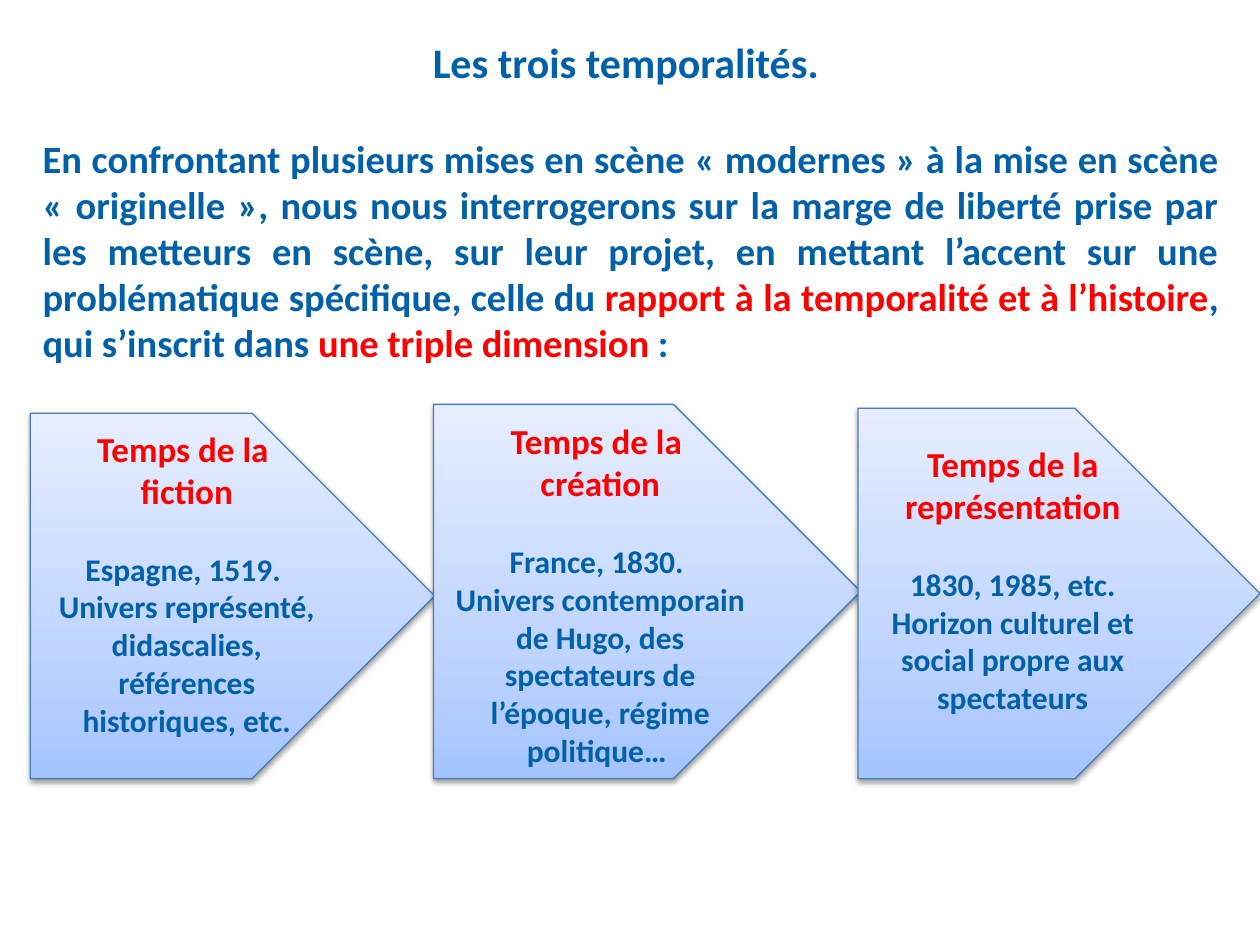
from copy import deepcopy

from lxml import etree
from pptx import Presentation
from pptx import util as u
from pptx.dml.color import RGBColor
from pptx.enum import shapes, text
from pptx.oxml import ns

BLUE = RGBColor(0x00, 0x60, 0xA8)
RED = RGBColor(0xFF, 0x00, 0x00)
OUTLINE = RGBColor(0x4B, 0x7E, 0xBC)
GRADIENT = [
    (0, RGBColor(0xA4, 0xC4, 0xFF)),
    (0.35, RGBColor(0xBF, 0xD4, 0xFF)),
    (1, RGBColor(0xE6, 0xEE, 0xFF)),
]
SHADOW = (
    f'<a:effectLst {ns.nsdecls("a")}>'
    '<a:outerShdw blurRad="40000" dist="20000" dir="5400000" rotWithShape="0">'
    '<a:srgbClr val="000000"><a:alpha val="38000"/></a:srgbClr>'
    "</a:outerShdw></a:effectLst>"
)
CENTER = text.PP_ALIGN.CENTER


def write(paragraph, runs, size, alignment=CENTER):
    """Add (wording, colour) runs in bold Calibri to an aligned paragraph."""
    paragraph.alignment = alignment
    for wording, color in runs:
        run = paragraph.add_run()
        run.text = wording
        run.font.color.rgb = color
        for name, value in {"name": "Calibri", "size": u.Pt(size), "bold": True}.items():
            setattr(run.font, name, value)


def prepare(frame, margin_top=0.05):
    settings = {
        "word_wrap": True,
        "auto_size": text.MSO_AUTO_SIZE.NONE,
        "vertical_anchor": text.MSO_ANCHOR.TOP,
        "margin_top": u.Inches(margin_top),
    }
    for name, value in settings.items():
        setattr(frame, name, value)


presentation = Presentation()
presentation.slide_width, presentation.slide_height = u.Inches(10), u.Inches(7.5)
slide = presentation.slides.add_slide(presentation.slide_layouts[5])
left, content_width = u.Inches(0.24), u.Inches(9.53)

title = slide.shapes.title
title_place = {"left": left, "top": u.Inches(0.24), "width": content_width, "height": u.Inches(0.6)}
for name, value in title_place.items():
    setattr(title, name, value)
prepare(title.text_frame)
write(title.text_frame.paragraphs[0], [("Les trois temporalités. ", BLUE)], 24)

introduction = slide.shapes.add_textbox(left, u.Inches(1.02), content_width, u.Inches(2))
prepare(introduction.text_frame)
write(
    introduction.text_frame.paragraphs[0],
    [
        ("En confrontant plusieurs mises en scène « modernes » à la mise en scène "
         "« originelle », nous nous interrogerons sur la marge de liberté prise par les "
         "metteurs en scène, sur leur projet, en mettant l’accent sur une problématique "
         "spécifique, celle du ", BLUE),
        ("rapport à la temporalité et à l’histoire", RED),
        (", qui s’inscrit dans ", BLUE),
        ("une triple dimension ", RED),
        (": ", BLUE),
    ],
    22,
    text.PP_ALIGN.JUSTIFY,
)

# left, top, width, top margin, heading lines, detail lines
arrows = [
    (0.24, 3.28, 3.21, 0.11, ["Temps de la ", "fiction"],
     ["Espagne, 1519. ", "Univers représenté, didascalies, références historiques, etc."]),
    (3.44, 3.21, 3.39, 0.12, ["Temps de la ", "création"],
     ["France, 1830. ",
      "Univers contemporain de Hugo, des spectateurs de l’époque, régime politique… "]),
    (6.81, 3.24, 3.19, 0.27, ["Temps de la représentation"],
     ["1830, 1985, etc. Horizon culturel et social propre aux spectateurs"]),
]
ARROW_BOTTOM = 6.18

for x, y, width, margin_top, heading, details in arrows:
    arrow = slide.shapes.add_shape(
        shapes.MSO_SHAPE.PENTAGON,
        u.Inches(x), u.Inches(y), u.Inches(width), u.Inches(ARROW_BOTTOM - y),
    )
    arrow.line.color.rgb = OUTLINE
    arrow.line.width = u.Pt(0.75)

    arrow.fill.gradient()
    arrow.fill.gradient_angle = 90
    properties = arrow._element.spPr
    stop_list = properties.find(".//" + ns.qn("a:gsLst"))
    stop_list.append(deepcopy(stop_list[0]))
    for stop, (position, color) in zip(arrow.fill.gradient_stops, GRADIENT):
        stop.position = position
        stop.color.rgb = color
    properties.append(etree.fromstring(SHADOW))

    frame = arrow.text_frame
    prepare(frame, margin_top)
    lines = [(line, RED, 20) for line in heading] + [(line, BLUE, 18) for line in details]
    for index, (line, color, size) in enumerate(lines):
        paragraph = frame.add_paragraph() if index else frame.paragraphs[0]
        write(paragraph, [(line, color)], size)
    frame.paragraphs[len(heading)].space_before = u.Pt(22)

presentation.save("out.pptx")
